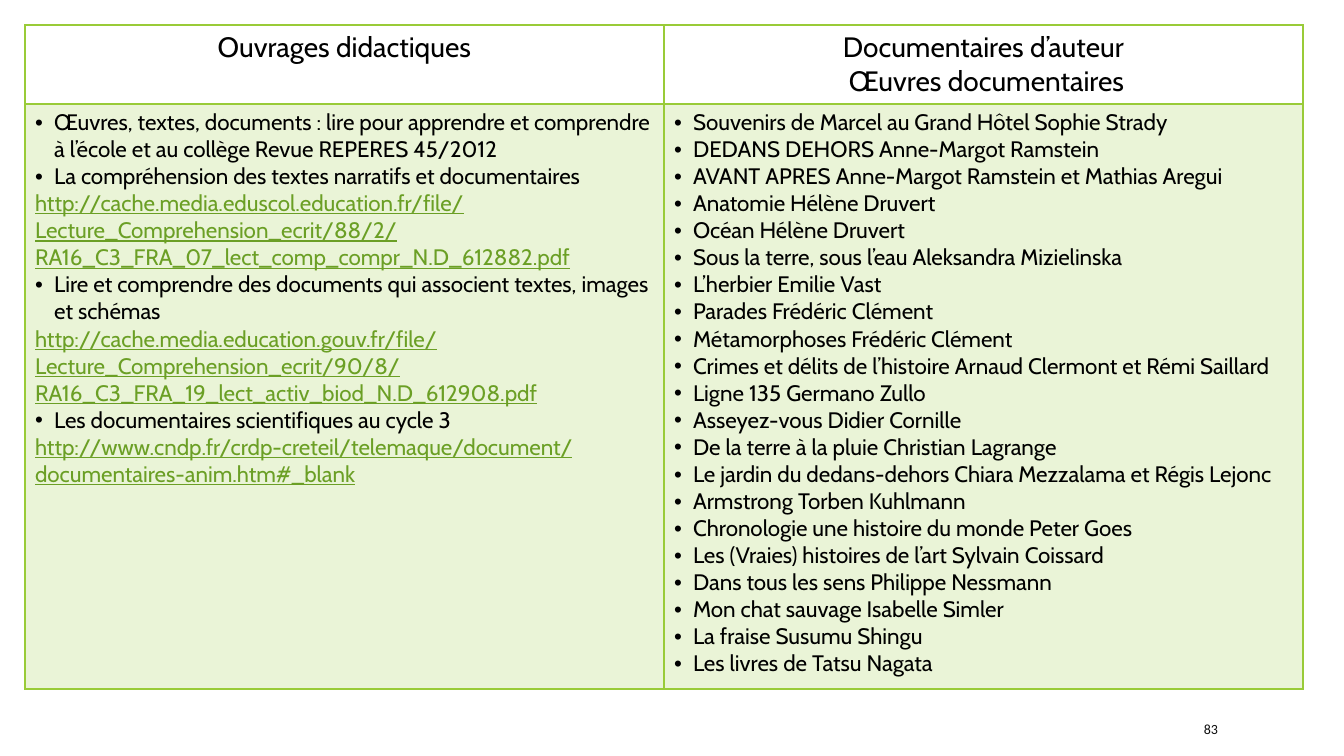
"""Slide comparing didactic works with authored documentary books in a two-column table."""
from lxml.etree import SubElement
from pptx import Presentation
from pptx.dml.color import RGBColor
from pptx.enum.text import MSO_ANCHOR, PP_ALIGN
from pptx.oxml import parse_xml
from pptx.oxml.ns import nsdecls, qn
from pptx.util import Pt

PX = 914400 / 100.8
BLACK = RGBColor(0x00, 0x00, 0x00)
NUMBER_GREY = RGBColor(0x0D, 0x0D, 0x0D)
GREEN = RGBColor(0x99, 0xCB, 0x38)
LINK_GREEN = RGBColor(0x6B, 0x9F, 0x25)

HEADERS = [
    ["Ouvrages didactiques"],
    ["Documentaires d’auteur", " Œuvres documentaires"],
]
DIDACTIC_WORKS = [
    "Œuvres, textes, documents : lire pour apprendre et comprendre à l’école et au collège Revue REPERES 45/2012",
    "La compréhension des textes narratifs et documentaires",
    "http://cache.media.eduscol.education.fr/file/Lecture_Comprehension_ecrit/88/2/RA16_C3_FRA_07_lect_comp_compr_N.D_612882.pdf",
    "Lire et comprendre des documents qui associent textes, images et schémas",
    "http://cache.media.education.gouv.fr/file/Lecture_Comprehension_ecrit/90/8/RA16_C3_FRA_19_lect_activ_biod_N.D_612908.pdf",
    "Les documentaires scientifiques au cycle 3",
    "http://www.cndp.fr/crdp-creteil/telemaque/document/documentaires-anim.htm#_blank",
]
DOCUMENTARIES = [
    "Souvenirs de Marcel au Grand Hôtel Sophie Strady",
    "DEDANS DEHORS Anne-Margot Ramstein",
    "AVANT APRES Anne-Margot Ramstein et Mathias Aregui",
    "Anatomie Hélène Druvert",
    "Océan Hélène Druvert",
    "Sous la terre, sous l’eau Aleksandra Mizielinska",
    "L’herbier Emilie Vast",
    "Parades Frédéric Clément",
    "Métamorphoses Frédéric Clément",
    "Crimes et délits de l’histoire Arnaud Clermont et Rémi Saillard",
    "Ligne 135 Germano Zullo",
    "Asseyez-vous Didier Cornille",
    "De la terre à la pluie Christian Lagrange",
    "Le jardin du dedans-dehors Chiara Mezzalama et Régis Lejonc",
    "Armstrong Torben Kuhlmann",
    "Chronologie une histoire du monde Peter Goes",
    "Les (Vraies) histoires de l’art Sylvain Coissard",
    "Dans tous les sens Philippe Nessmann",
    "Mon chat sauvage Isabelle Simler",
    "La fraise Susumu Shingu",
    "Les livres de Tatsu Nagata",
]


def px(*lengths):
    return [round(length * PX) for length in lengths]


def set_borders(cell, bottom_width):
    widths = {"lnL": 1, "lnR": 1, "lnT": 1, "lnB": bottom_width}
    for index, (side, width) in enumerate(widths.items()):
        border = parse_xml(
            f'<a:{side} {nsdecls("a")} w="{Pt(width)}"><a:solidFill>'
            f'<a:srgbClr val="{GREEN}"/></a:solidFill></a:{side}>'
        )
        cell._tc.get_or_add_tcPr().insert(index, border)


presentation = Presentation()
presentation.slide_width, presentation.slide_height = px(1344, 756)
slide = presentation.slides.add_slide(presentation.slide_layouts[6])

number_box = slide.shapes.add_textbox(*px(1194, 714, 107, 30))
number_box.text_frame.word_wrap = True
number_box.text_frame.vertical_anchor = MSO_ANCHOR.MIDDLE
number = number_box.text_frame.paragraphs[0]
number.text = "83"
number.font.name = "Calibri"
number.font.size = Pt(10)
number.font.color.rgb = NUMBER_GREY

table = slide.shapes.add_table(2, 2, *px(25, 25, 1278, 664)).table
table.first_row = False
table.horz_banding = False
table.rows[0].height, table.rows[1].height = px(79, 585)
indent, = px(19)

for row, contents in enumerate([HEADERS, [DIDACTIC_WORKS, DOCUMENTARIES]]):
    is_header = row == 0
    for column, lines in enumerate(contents):
        cell = table.cell(row, column)
        if is_header:
            cell.fill.background()
        else:
            cell.fill.solid()
            cell.fill.fore_color.rgb = GREEN
            color = cell._tc.tcPr.find(".//" + qn("a:srgbClr"))
            SubElement(color, qn("a:alpha"), val="20000")
        set_borders(cell, 2 if is_header else 1)

        for index, line in enumerate(lines):
            frame = cell.text_frame
            paragraph = frame.add_paragraph() if index else frame.paragraphs[0]
            paragraph.text = line
            is_link = line.startswith("http")
            if is_header:
                paragraph.alignment = PP_ALIGN.CENTER
            elif not is_link:
                properties = paragraph._p.get_or_add_pPr()
                properties.set("marL", str(indent))
                properties.set("indent", str(-indent))
                SubElement(properties, qn("a:buFont"), typeface="Arial")
                SubElement(properties, qn("a:buChar"), char="•")
            paragraph.font.name = "Cabin"
            paragraph.font.size = Pt(20 if is_header else 16)
            paragraph.font.color.rgb = LINK_GREEN if is_link else BLACK
            paragraph.font.underline = is_link

presentation.save("out.pptx")
